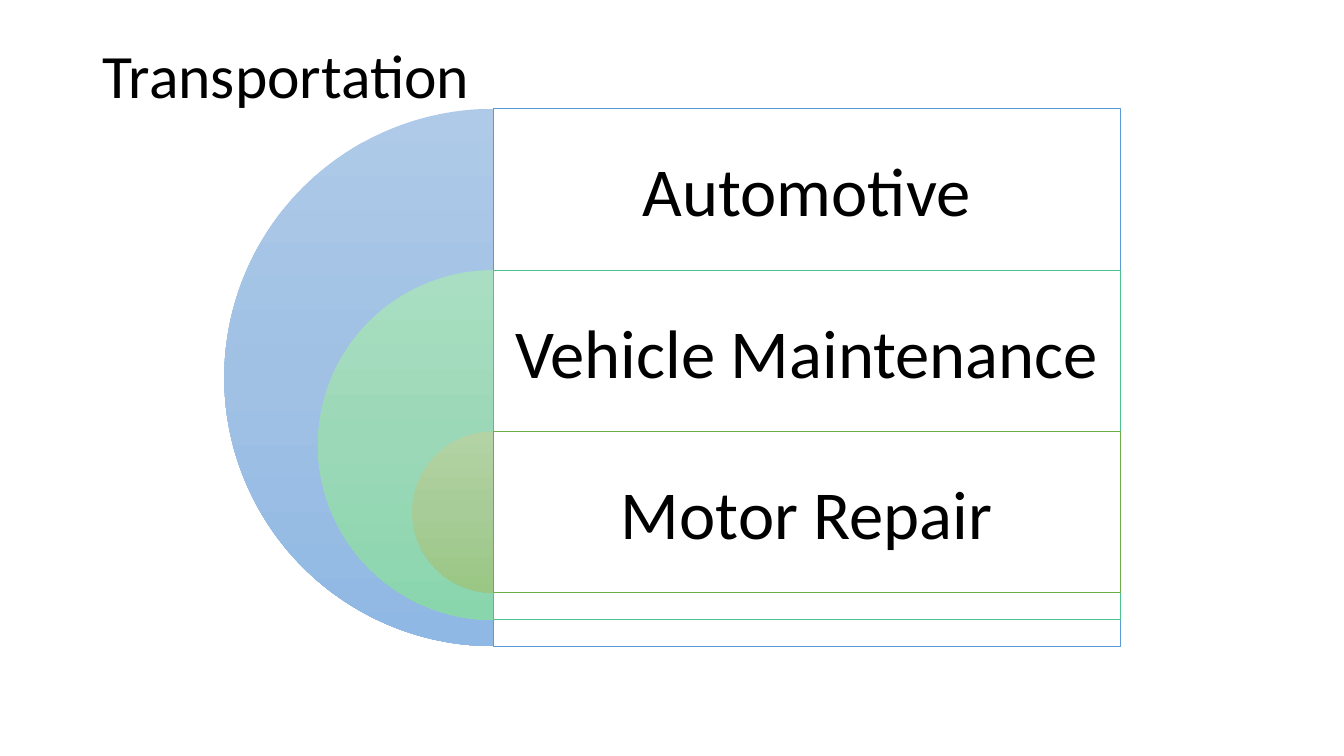
from copy import deepcopy

from lxml import etree
from pptx import Presentation
from pptx.dml.color import RGBColor
from pptx.enum import shapes, text
from pptx.oxml.ns import qn
from pptx.util import Inches, Pt

TITLE = "Transportation"
# label, colour key, circle diameter
LEVELS = [
    ("Automotive", "blue", 5.33),
    ("Vehicle Maintenance", "green", 3.47),
    ("Motor Repair", "olive", 1.6),
]
COLOURS = {
    "blue": "599BD5", "green": "4CC38C", "olive": "6FAB46",
    "white": "FFFFFF", "black": "000000",
}
GRADIENTS = {
    "blue": ("AFCAE9", "A0C1E4", "8FB8E4"),
    "green": ("A9DEC2", "9BD8B7", "89D6AD"),
    "olive": ("B3D3A4", "A7CC97", "9AC784"),
}
FONT = "Calibri"
AXIS_X, TOP, PANEL_WIDTH, ROW = 4.89, 1.08, 6.22, 1.6


def rgb(value):
    return RGBColor.from_string(value)


def add_shape(page, kind, *place):
    shape = page.shapes.add_shape(kind, *map(Inches, place))
    shape.shadow.inherit = False
    return shape


def add_half_circle(page, top, size, colours):
    pie = add_shape(page, shapes.MSO_SHAPE.PIE, AXIS_X - size / 2, top, size, size)
    pie.adjustments[0], pie.adjustments[1] = 54, 162
    pie.line.fill.background()
    pie.fill.gradient()
    pie.fill.gradient_angle = 270
    # The default gradient has two stops; add a middle one
    stops = pie._element.spPr.find(qn("a:gradFill")).find(qn("a:gsLst"))
    stops.insert(1, deepcopy(stops[0]))
    for stop, colour, position in zip(pie.fill.gradient_stops, colours, (0, 0.5, 1)):
        stop.color.rgb = rgb(colour)
        stop.position = position


def add_panel(page, top, height, colour):
    panel = add_shape(page, shapes.MSO_SHAPE.RECTANGLE, AXIS_X, top, PANEL_WIDTH, height)
    panel.fill.solid()
    panel.fill.fore_color.rgb = rgb(COLOURS["white"])
    tint = panel._element.spPr.find(qn("a:solidFill"))[0]
    etree.SubElement(tint, qn("a:alpha"), val="90000")
    panel.line.color.rgb = rgb(colour)
    panel.line.width = Pt(0.75)


def add_text(page, wording, place, size, insets, anchor, align, spacing=None):
    box = page.shapes.add_textbox(*map(Inches, place))
    frame = box.text_frame
    frame.word_wrap = True
    frame.vertical_anchor = anchor
    side, edge = map(Inches, insets)
    frame.margin_left = frame.margin_right = side
    frame.margin_top = frame.margin_bottom = edge
    para = frame.paragraphs[0]
    para.alignment = align
    para.line_spacing = spacing
    span = para.add_run()
    span.text = wording
    span.font.name = FONT
    span.font.size = Pt(size)
    span.font.color.rgb = rgb(COLOURS["black"])


def main():
    deck = Presentation()
    deck.slide_width, deck.slide_height = Inches(13.33), Inches(7.5)
    page = deck.slides.add_slide(deck.slide_layouts[6])

    # Nested half circles, each with its panel and label
    for index, (label, key, size) in enumerate(LEVELS):
        top = TOP + index * ROW
        add_half_circle(page, top, size, GRADIENTS[key])
        add_panel(page, top, size, COLOURS[key])
        add_text(page, label, (AXIS_X, top, PANEL_WIDTH, ROW), 49, (0.2, 0.2),
                 text.MSO_ANCHOR.MIDDLE, text.PP_ALIGN.CENTER)

    # Title
    add_text(page, TITLE, (0.92, 0.4, 11.5, 1.45), 44, (0.1, 0.05),
             text.MSO_ANCHOR.TOP, text.PP_ALIGN.LEFT, 0.9)

    deck.save("out.pptx")


if __name__ == "__main__":
    main()
